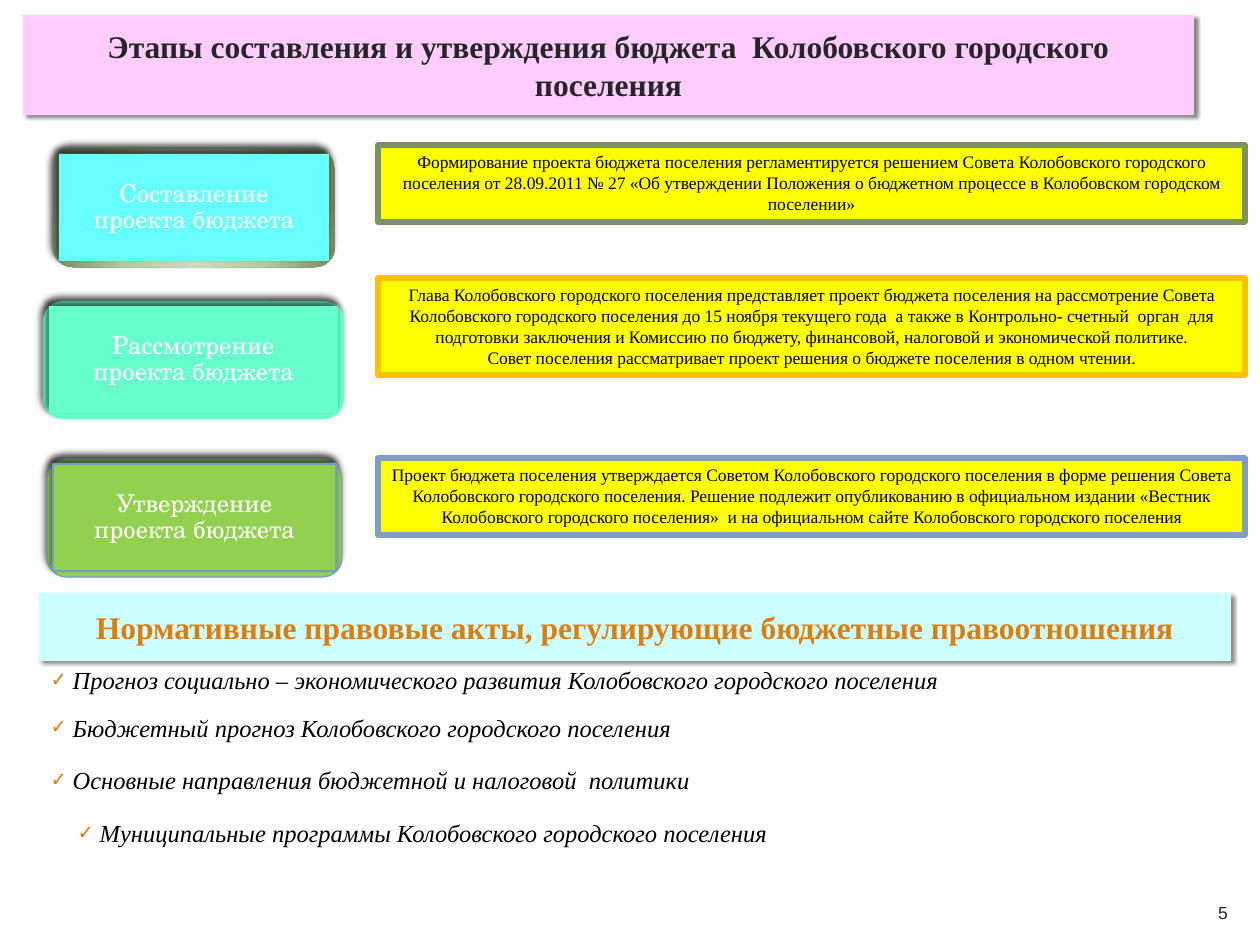
from dataclasses import dataclass

from pptx import Presentation, oxml, util as u
from pptx.dml.color import RGBColor
from pptx.enum import shapes, text
from pptx.oxml.ns import nsdecls, qn

PX = 914400 / 126


def px(*lengths):
    return [u.Emu(round(length * PX)) for length in lengths]


@dataclass(frozen=True)
class Theme:
    serif: str = "Times New Roman"
    school: str = "TeX Gyre Schola"
    sans: str = "Arial"
    heading: int = 18
    body: int = 14
    small: int = 10
    ink: str = "000000"
    dark: str = "262626"
    white: str = "FFFFFF"
    accent: str = "DD7E0E"
    pink: str = "FFCCFF"
    ice: str = "CCFFFF"
    yellow: str = "FFFF00"
    aqua: str = "66FFFF"
    mint: str = "66FFCC"
    green: str = "92D050"
    blue_edge: str = "799DC9"
    note_edges: tuple = ("7D9263", "FFC000", "809EC2")
    olive: tuple = ((0, "CFDBC3"), (46, "B6CA9F"), (100, "6F815B"))
    # colour, opacity %, blur pt, distance pt, direction in degrees
    banner_shadow: tuple = ("595959", 71, 2, 2, 40)
    card_shadow: tuple = ("000000", 60, 4, 3, 245)


class SlideBuilder:
    """Holds the theme and the current slide, and adds elements to it."""

    def __init__(self, page, theme):
        self.page = page
        self.theme = theme

    def place(self, shape, at):
        shape.left, shape.top, shape.width, shape.height = px(*at)

    def paint(self, shape, fill, edge=None, edge_width=0.75, shadow=None):
        shape.shadow.inherit = False
        if isinstance(fill, str):
            shape.fill.solid()
            shape.fill.fore_color.rgb = RGBColor.from_string(fill)
        else:
            self.radial_fill(shape, fill)
        if edge:
            shape.line.color.rgb = RGBColor.from_string(edge)
            shape.line.width = u.Pt(edge_width)
        else:
            shape.line.fill.background()
        if shadow:
            color, opacity, blur, distance, angle = shadow
            effects = shape._element.spPr.find(qn("a:effectLst"))
            effects.append(oxml.parse_xml(
                f'<a:outerShdw {nsdecls("a")} blurRad="{u.Pt(blur)}" dist="{u.Pt(distance)}"'
                f' dir="{angle * 60000}" algn="ctr" rotWithShape="0"><a:srgbClr val="{color}">'
                f'<a:alpha val="{opacity * 1000}"/></a:srgbClr></a:outerShdw>'))

    def radial_fill(self, shape, stops):
        shape.fill.background()
        marks = "".join(f'<a:gs pos="{at * 1000}"><a:srgbClr val="{color}"/></a:gs>'
                        for at, color in stops)
        properties = shape._element.spPr
        blank = properties.find(qn("a:noFill"))
        properties.replace(blank, oxml.parse_xml(
            f'<a:gradFill {nsdecls("a")}><a:gsLst>{marks}</a:gsLst><a:path path="circle">'
            '<a:fillToRect l="50000" t="155000" r="50000" b="-55000"/></a:path></a:gradFill>'))

    def style_font(self, para, font, size, color, bold=False, italic=False):
        para.font.name = font
        para.font.size = u.Pt(size)
        para.font.bold = bold
        para.font.italic = italic
        para.font.color.rgb = RGBColor.from_string(color)

    def label(self, shape, words, font, size, color, bold=False,
              anchor=text.MSO_ANCHOR.MIDDLE):
        frame = shape.text_frame
        frame.text = words
        frame.word_wrap = True
        frame.auto_size = text.MSO_AUTO_SIZE.NONE
        frame.vertical_anchor = anchor
        for para in frame.paragraphs:
            para.alignment = text.PP_ALIGN.CENTER
            self.style_font(para, font, size, color, bold)
        return frame

    def rectangle(self, at, parent=None, kind=shapes.MSO_SHAPE.RECTANGLE):
        return (parent or self.page).shapes.add_shape(kind, *px(*at))

    def heading(self, box, words, fill, color):
        self.paint(box, fill, shadow=self.theme.banner_shadow)
        self.label(box, words, self.theme.serif, self.theme.heading, color, bold=True)

    def title(self, at, words):
        box = self.page.shapes.title
        self.place(box, at)
        self.heading(box, words, self.theme.pink, self.theme.dark)

    def banner(self, at, words):
        self.heading(self.rectangle(at), words, self.theme.ice, self.theme.accent)

    def card(self, at, words, rim, fill, edge):
        """Rounded rim with a labelled panel set inside it."""
        left, top, width, height = at
        group = self.page.shapes.add_group_shape()
        back = self.rectangle(at, group, shapes.MSO_SHAPE.ROUNDED_RECTANGLE)
        self.paint(back, rim, edge, shadow=self.theme.card_shadow)
        panel = self.rectangle((left + 6, top + 5, width - 12, height - 11), group)
        self.paint(panel, fill, edge, shadow=self.theme.card_shadow)
        frame = self.label(panel, words, self.theme.school, self.theme.body, self.theme.white)
        frame.margin_left, frame.margin_right, frame.margin_top, frame.margin_bottom = px(
            32, 32, 0, 0)
        frame.paragraphs[0].line_spacing = 0.9

    def note(self, at, words, edge):
        box = self.rectangle(at)
        self.paint(box, self.theme.yellow, edge, edge_width=3)
        self.label(box, words, self.theme.serif, self.theme.small, self.theme.ink,
                   anchor=text.MSO_ANCHOR.TOP)

    def checklist(self, at, items):
        """Fill the body placeholder with (words, indent px, space before pt) items."""
        box = self.page.placeholders[1]
        self.place(box, at)
        frame = box.text_frame
        frame.text = "\n".join(words for words, _, _ in items)
        frame.auto_size = text.MSO_AUTO_SIZE.NONE
        hang, = px(22)
        for para, (_, indent, space) in zip(frame.paragraphs, items):
            properties = para._p.get_or_add_pPr()
            properties.set("marL", str(px(indent)[0] + hang))
            properties.set("indent", str(-hang))
            for tag in (f'buClr {nsdecls("a")}><a:srgbClr val="{self.theme.accent}"/></a:buClr',
                        f'buSzPct {nsdecls("a")} val="80000"/',
                        f'buChar {nsdecls("a")} char="✓"/'):
                properties.append(oxml.parse_xml(f"<a:{tag}>"))
            para.space_before = u.Pt(space)
            self.style_font(para, self.theme.serif, self.theme.body, self.theme.ink, italic=True)

    def page_number(self, at, number):
        box = self.page.shapes.add_textbox(*px(*at))
        self.label(box, number, self.theme.sans, self.theme.small, self.theme.dark)


def main():
    deck = Presentation()
    deck.slide_width, deck.slide_height = px(1260, 945)
    theme = Theme()
    slide = SlideBuilder(deck.slides.add_slide(deck.slide_layouts[1]), theme)

    slide.title((23, 15, 1171, 100),
                "Этапы составления и утверждения бюджета  Колобовского городского поселения")
    slide.checklist((38, 659, 1166, 200), [
        ("Прогноз социально – экономического развития Колобовского городского поселения", 0, 0),
        ("Бюджетный прогноз Колобовского городского поселения", 0, 10.2),
        ("Основные направления бюджетной и налоговой  политики", 0, 13.4),
        ("Муниципальные программы Колобовского городского поселения", 27, 13.4),
    ])
    slide.banner((39, 593, 1192, 68),
                 "Нормативные правовые акты, регулирующие бюджетные правоотношения")

    for left, top, width, stage, rim, fill, edge in (
        (53, 149, 282, "Составление", theme.olive, theme.aqua, None),
        (43, 301, 301, "Рассмотрение", theme.mint, theme.mint, None),
        (47, 459, 295, "Утверждение", theme.green, theme.green, theme.blue_edge),
    ):
        slide.card((left, top, width, 118), f"{stage} проекта бюджета", rim, fill, edge)

    notes = (
        (145, 77,
         "Формирование проекта бюджета поселения регламентируется решением Совета "
         "Колобовского городского поселения от 28.09.2011 № 27 «Об утверждении Положения "
         "о бюджетном процессе в Колобовском городском поселении»"),
        (278, 97,
         "Глава Колобовского городского поселения представляет проект бюджета поселения на "
         "рассмотрение Совета Колобовского городского поселения до 15 ноября текущего года  "
         "а также в Контрольно- счетный  орган  для подготовки заключения и Комиссию по "
         "бюджету, финансовой, налоговой и экономической политике.\n"
         "Совет поселения рассматривает проект решения о бюджете поселения в одном чтении."),
        (458, 77,
         "Проект бюджета поселения утверждается Советом Колобовского городского поселения в "
         "форме решения Совета Колобовского городского поселения. Решение подлежит "
         "опубликованию в официальном издании «Вестник Колобовского городского поселения»  "
         "и на официальном сайте Колобовского городского поселения"),
    )
    for (top, height, words), edge in zip(notes, theme.note_edges):
        slide.note((378, top, 867, height), words, edge)

    slide.page_number((1191, 888, 64, 50), "5")
    deck.save("out.pptx")


if __name__ == "__main__":
    main()
